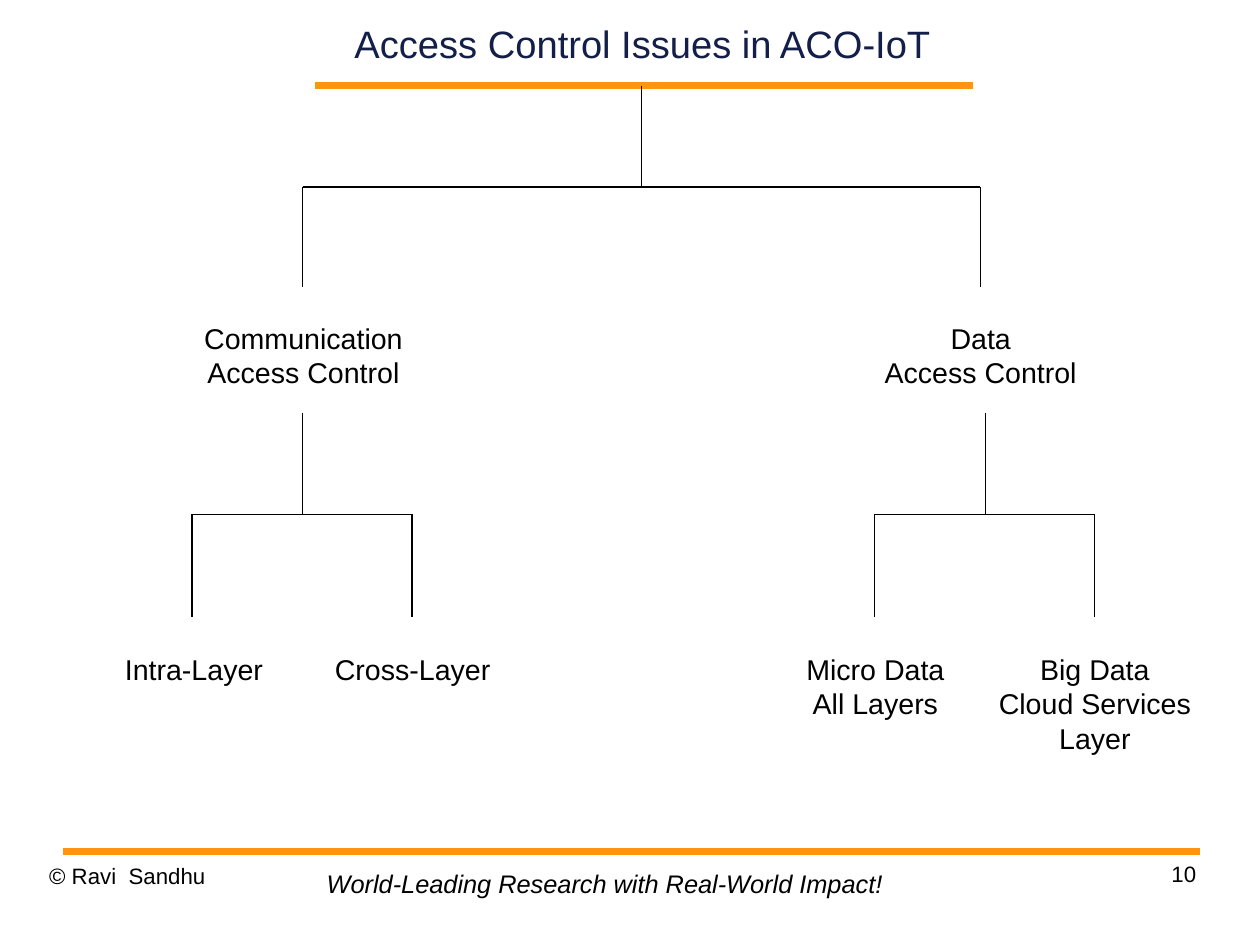
from dataclasses import dataclass

from pptx import Presentation
from pptx.dml.color import RGBColor
from pptx.enum.shapes import MSO_CONNECTOR
from pptx.enum.text import MSO_ANCHOR, MSO_AUTO_SIZE, PP_ALIGN
from pptx.oxml.ns import qn
from pptx.util import Pt
from lxml.etree import SubElement


@dataclass(frozen=True)
class Theme:
    """Colours, font and type sizes of the slide."""
    font: str = "Arial"
    ink: RGBColor = RGBColor(0x00, 0x00, 0x00)
    navy: RGBColor = RGBColor(0x13, 0x1F, 0x49)
    orange: RGBColor = RGBColor(0xFF, 0x95, 0x0E)
    title_size: float = 24
    label_size: float = 18
    motto_size: float = 16
    footer_size: float = 14
    rule_width: float = 4.31
    branch_width: float = 0.75


THEME = Theme()
LABEL_LINE = 22
LABEL_PADDING = 7.2
DATA_SHIFT = 429.8


def style_paragraph(para, size, color, align, italic=False):
    """Set the alignment and font of one paragraph."""
    para.alignment = align
    para.font.name = THEME.font
    para.font.size = Pt(size)
    para.font.color.rgb = color
    para.font.italic = italic


def clear_margins(frame):
    """Remove the inner margins of a text frame."""
    frame.margin_left = frame.margin_top = frame.margin_right = frame.margin_bottom = 0


def add_line(slide, start, end, color=THEME.ink, width=THEME.branch_width):
    """Draw a straight line without a shadow."""
    line = slide.shapes.add_connector(
        MSO_CONNECTOR.STRAIGHT, *(Pt(value) for value in (*start, *end)))
    line.line.color.rgb = color
    line.line.width = Pt(width)
    SubElement(line._element.spPr, qn("a:effectLst"))


def add_text(slide, place, lines, size, align, italic=False):
    """Add an unwrapped text box with one paragraph per line."""
    box = slide.shapes.add_textbox(*(Pt(value) for value in place))
    frame = box.text_frame
    frame.word_wrap = False
    frame.auto_size = MSO_AUTO_SIZE.SHAPE_TO_FIT_TEXT
    frame.text = "\n".join(lines)
    for para in frame.paragraphs:
        style_paragraph(para, size, THEME.ink, align, italic)


def add_footer(slide, place, text, align):
    """Add a small footer text without margins."""
    box = slide.shapes.add_textbox(*(Pt(value) for value in place))
    frame = box.text_frame
    frame.word_wrap = True
    clear_margins(frame)
    frame.text = text
    para = frame.paragraphs[0]
    para.line_spacing = 1.01
    style_paragraph(para, THEME.footer_size, THEME.ink, align)


def add_label(slide, center, top, width, *lines):
    """Add a tree label centred on a horizontal position."""
    height = LABEL_LINE * len(lines) + LABEL_PADDING
    add_text(slide, (center - width / 2, top, width, height), lines,
             THEME.label_size, PP_ALIGN.CENTER)


def add_fork(slide, stem, left, right, top, bar, bottom):
    """Draw a stem, a crossbar and two legs."""
    add_line(slide, (stem, top), (stem, bar))
    add_line(slide, (left, bar), (right, bar))
    for leg in (left, right):
        add_line(slide, (leg, bar), (leg, bottom))


def set_title(slide, text):
    """Place and format the title."""
    title = slide.shapes.title
    title.left, title.top, title.width, title.height = Pt(173.2), Pt(0), Pt(463), Pt(54)
    frame = title.text_frame
    frame.auto_size = MSO_AUTO_SIZE.NONE
    frame.vertical_anchor = MSO_ANCHOR.MIDDLE
    clear_margins(frame)
    frame.text = text
    style_paragraph(frame.paragraphs[0], THEME.title_size, THEME.navy, PP_ALIGN.CENTER)


def main():
    """Build the slide and save the deck."""
    deck = Presentation()
    deck.slide_width, deck.slide_height = Pt(793.75), Pt(595.25)
    slide = deck.slides.add_slide(deck.slide_layouts[5])

    for left, right, height in ((198.7, 612.7, 54), (39.4, 755.8, 536.2)):
        add_line(slide, (left, height), (right, height), THEME.orange, THEME.rule_width)
    add_footer(slide, (31, 543.3, 185, 41), "© Ravi  Sandhu", PP_ALIGN.LEFT)
    add_footer(slide, (568.6, 542, 185, 41), "10", PP_ALIGN.RIGHT)
    add_text(slide, (198.7, 543.6, 365.8, 26.6),
             ["World-Leading Research with Real-World Impact!"],
             THEME.motto_size, PP_ALIGN.LEFT, italic=True)
    set_title(slide, "Access Control Issues in ACO-IoT")

    add_fork(slide, 404.2, 190.8, 617.6, 54, 117.8, 181)
    for shift in (0, DATA_SHIFT):
        add_fork(slide, 190.8 + shift, 121 + shift, 259.6 + shift, 260, 324, 388.5)

    add_label(slide, 191.2, 198.7, 141, "Communication", "Access Control")
    add_label(slide, 617.8, 198.7, 141, "Data", "Access Control")
    add_label(slide, 122.2, 407.2, 102, "Intra-Layer")
    add_label(slide, 260, 407.2, 114, "Cross-Layer")
    add_label(slide, 551.5, 407.2, 102, "Micro Data", "All Layers")
    add_label(slide, 689.7, 407.2, 137, "Big Data", "Cloud Services", "Layer")

    deck.save("out.pptx")


if __name__ == "__main__":
    main()
